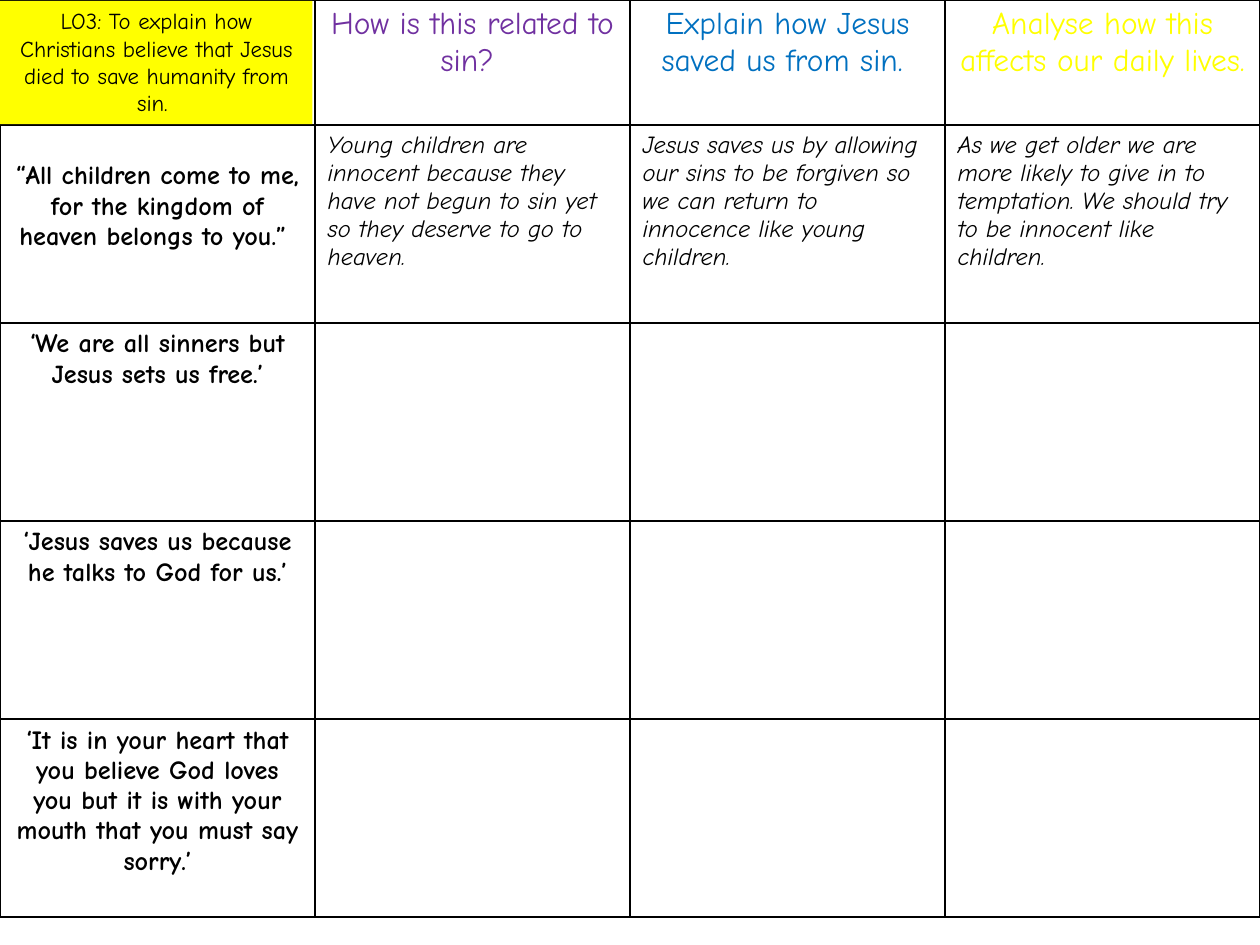
from lxml import etree
from pptx import Presentation, util as u
from pptx.dml.color import RGBColor
from pptx.enum import shapes, text
from pptx.oxml import ns

COLOURS = {
    "ink": "000000",
    "objective": "FFFF00",
    "sin": "7030A0",
    "salvation": "0070C0",
    "daily life": "FFFF00",
}
HEADING = {"size": u.Pt(18), "bold": False}
QUOTE = {"size": u.Pt(15), "bold": True}
ANSWER = {"size": u.Pt(14), "bold": False, "italic": True}
OBJECTIVE = {"size": u.Pt(13)}
CENTRE, LEFT = text.PP_ALIGN.CENTER, text.PP_ALIGN.LEFT

questions = [
    ("How is this related to sin? ", "sin"),
    ("Explain how Jesus saved us from sin. ", "salvation"),
    ("Analyse how this affects our daily lives.", "daily life"),
]
quotes = [
    "“All children come to me, for the kingdom of heaven belongs to you.” ",
    "‘We are all sinners but Jesus sets us free.’",
    "‘Jesus saves us because he talks to God for us.’",
    "‘It is in your heart that you believe God loves you but it is with your mouth that you must say sorry.’",
]
model_answers = [
    "Young children are innocent because they have not begun to sin yet so they deserve to go to heaven.",
    "Jesus saves us by allowing our sins to be forgiven so we can return to innocence like young children.",
    "As we get older we are more likely to give in to temptation. We should try to be innocent like children.",
]


class Worksheet:
    font_name = "Comic Neue"
    border_width = u.Pt(1)

    def __init__(self, slide):
        self.slide = slide

    def colour(self, name):
        return RGBColor.from_string(COLOURS[name])

    def add_words(self, frame, words, style, align=CENTRE, colour="ink"):
        paragraph = frame.paragraphs[0]
        paragraph.alignment = align
        run = paragraph.add_run()
        run.text = words
        for attribute, value in {"name": self.font_name, **style}.items():
            setattr(run.font, attribute, value)
        run.font.color.rgb = self.colour(colour)

    def border(self, cell):
        properties = cell._tc.get_or_add_tcPr()
        for position, side in enumerate(("lnL", "lnR", "lnT", "lnB")):
            line = etree.Element(ns.qn(f"a:{side}"), w=str(int(self.border_width)))
            fill = etree.SubElement(line, ns.qn("a:solidFill"))
            etree.SubElement(fill, ns.qn("a:srgbClr"), val=COLOURS["ink"])
            properties.insert(position, line)

    def grid(self, column_width, row_heights, columns):
        frame = self.slide.shapes.add_table(
            len(row_heights), columns, 0, 0, column_width * columns, sum(row_heights))
        table = frame.table
        for column in table.columns:
            column.width = column_width
        for row, height in zip(table.rows, row_heights):
            row.height = height
        for cell in table.iter_cells():
            cell.fill.background()
            self.border(cell)
        return table

    def panel(self, left, top, width, height, words, style, fill):
        box = self.slide.shapes.add_shape(
            shapes.MSO_SHAPE.RECTANGLE, left, top, width, height)
        box.shadow.inherit = False
        box.fill.solid()
        box.fill.fore_color.rgb = self.colour(fill)
        box.line.fill.background()
        frame = box.text_frame
        for attribute, value in {
            "word_wrap": True,
            "auto_size": text.MSO_AUTO_SIZE.SHAPE_TO_FIT_TEXT,
            "vertical_anchor": text.MSO_ANCHOR.TOP,
        }.items():
            setattr(frame, attribute, value)
        self.add_words(frame, words, style)


def main():
    deck = Presentation()
    deck.slide_width, deck.slide_height = u.Pt(720), u.Pt(540)
    sheet = Worksheet(deck.slides.add_slide(deck.slide_layouts[6]))

    row_heights = [u.Pt(71.3)] + [u.Pt(113.2)] * len(quotes)
    table = sheet.grid(u.Pt(180), row_heights, len(questions) + 1)
    for column, (question, colour) in enumerate(questions, 1):
        sheet.add_words(table.cell(0, column).text_frame, question, HEADING, colour=colour)
    for row, quote in enumerate(quotes, 1):
        sheet.add_words(table.cell(row, 0).text_frame, quote, QUOTE)
    for column, answer in enumerate(model_answers, 1):
        sheet.add_words(table.cell(1, column).text_frame, answer, ANSWER, LEFT)
    table.cell(1, 0).margin_top = u.Pt(20.8)

    sheet.panel(
        0, u.Pt(0.5), u.Pt(178.5), u.Pt(70.5),
        "LO3: To explain how Christians believe that Jesus died to save humanity from sin. ",
        OBJECTIVE, "objective")
    deck.save("out.pptx")


if __name__ == "__main__":
    main()
